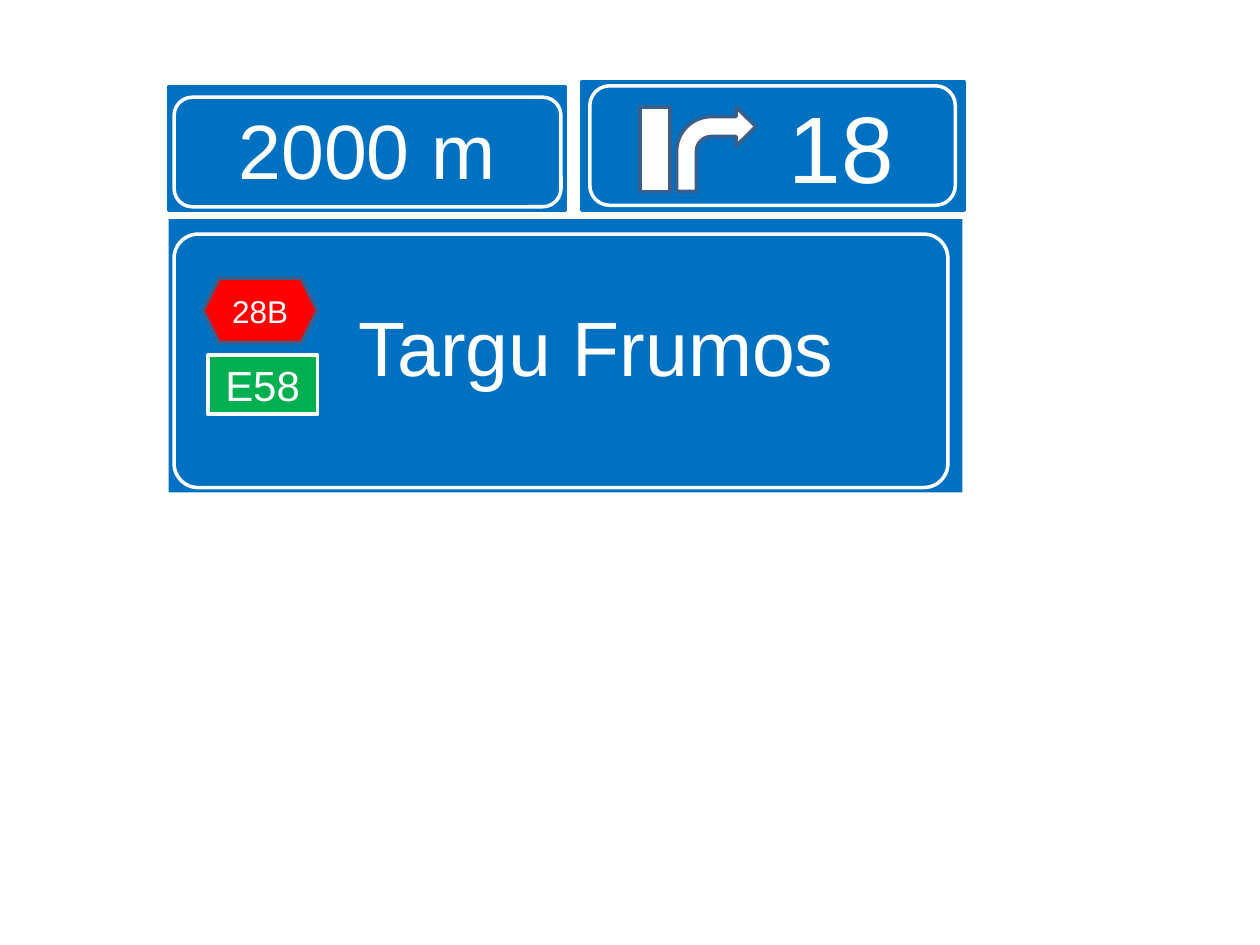
from dataclasses import dataclass

from pptx import Presentation
from pptx.dml.color import RGBColor
from pptx.enum.shapes import MSO_SHAPE
from pptx.enum.text import MSO_ANCHOR, PP_ALIGN
from pptx.util import Cm, Pt


@dataclass(frozen=True)
class Theme:
    font: str = "Arial"
    blue: str = "0070C0"
    white: str = "FFFFFF"
    outline: str = "3A5F8C"
    red: str = "FF0000"
    green: str = "00B050"
    line_width: int = 2
    exit_size: int = 54
    sign_size: int = 44
    european_size: int = 24
    national_size: int = 18


THEME = Theme()


@dataclass(frozen=True)
class Box:
    left: float
    top: float
    width: float
    height: float

    def inner(self, left, top, width, height):
        return Box(self.left + left, self.top + top, width, height)


def add_part(slide, kind, box, fill=None, line=None, adjustments=()):
    shape = slide.shapes.add_shape(
        kind, Cm(box.left), Cm(box.top), Cm(box.width), Cm(box.height)
    )
    shape.shadow.inherit = False
    for index, value in enumerate(adjustments):
        shape.adjustments[index] = value
    if fill:
        shape.fill.solid()
        shape.fill.fore_color.rgb = RGBColor.from_string(fill)
    else:
        shape.fill.background()
    if line:
        shape.line.color.rgb = RGBColor.from_string(line)
        shape.line.width = Pt(THEME.line_width)
    else:
        shape.line.fill.background()
    return shape


def write_text(shape, text, *, size, left=0, top=0, right=0, bottom=0):
    frame = shape.text_frame
    frame.word_wrap = True
    frame.vertical_anchor = MSO_ANCHOR.MIDDLE
    frame.margin_left, frame.margin_right = Cm(left), Cm(right)
    frame.margin_top, frame.margin_bottom = Cm(top), Cm(bottom)
    paragraph = frame.paragraphs[0]
    paragraph.alignment = PP_ALIGN.CENTER
    run = paragraph.add_run()
    run.text = text
    run.font.name = THEME.font
    run.font.size = Pt(size)
    run.font.color.rgb = RGBColor.from_string(THEME.white)


def add_border(slide, box, rounding=0.167):
    add_part(slide, MSO_SHAPE.ROUNDED_RECTANGLE, box,
             line=THEME.white, adjustments=[rounding])


def add_distance_panel(slide, box):
    panel = add_part(slide, MSO_SHAPE.ROUNDED_RECTANGLE, box,
                     THEME.blue, THEME.blue, [0])
    write_text(panel, "2000 m", size=THEME.sign_size)
    add_border(slide, box.inner(0.11, 0.21, 7.8, 2.21))


def add_exit_panel(slide, box):
    panel = add_part(slide, MSO_SHAPE.ROUNDED_RECTANGLE, box,
                     THEME.blue, THEME.blue, [0])
    write_text(panel, "18", size=THEME.exit_size, left=3, right=0.25)
    add_part(slide, MSO_SHAPE.RECTANGLE, box.inner(1.17, 0.51, 0.61, 1.7),
             THEME.white, THEME.outline)
    add_part(slide, MSO_SHAPE.BENT_ARROW, box.inner(1.91, 0.51, 1.6, 1.7),
             THEME.white, THEME.outline, [0.25, 0.245, 0.25, 0.438])
    add_border(slide, box.inner(0.16, 0.08, 7.37, 2.41))


def add_destination_panel(slide, box):
    panel = add_part(slide, MSO_SHAPE.RECTANGLE, box, THEME.blue)
    write_text(panel, "Targu Frumos", size=THEME.sign_size,
               left=1.5, top=1, right=0.25, bottom=1.42)
    add_border(slide, box.inner(0.11, 0.3, 15.6, 5.11), 0.095)
    national_road = add_part(slide, MSO_SHAPE.HEXAGON,
                             box.inner(0.69, 1.19, 2.31, 1.3),
                             THEME.red, THEME.outline)
    write_text(national_road, "28B", size=THEME.national_size)
    european_road = add_part(slide, MSO_SHAPE.RECTANGLE,
                             box.inner(0.79, 2.74, 2.21, 1.19),
                             THEME.green, THEME.white)
    write_text(european_road, "E58", size=THEME.european_size)


def main():
    presentation = Presentation()
    presentation.slide_width = Cm(25.4)
    presentation.slide_height = Cm(19.05)
    slide = presentation.slides.add_slide(presentation.slide_layouts[6])
    add_distance_panel(slide, Box(3.4, 1.75, 8, 2.49))
    add_exit_panel(slide, Box(11.73, 1.65, 7.7, 2.59))
    add_destination_panel(slide, Box(3.4, 4.42, 16, 5.51))
    presentation.save("out.pptx")


if __name__ == "__main__":
    main()
